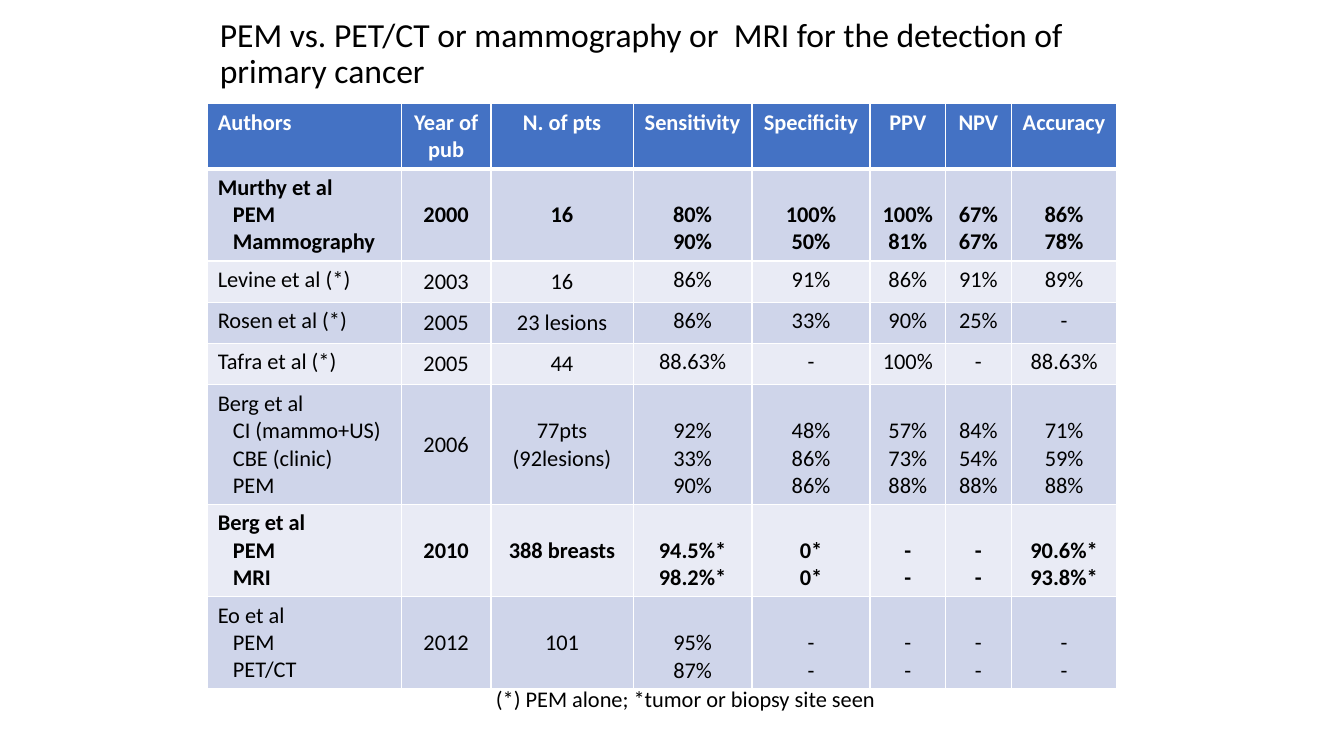
from dataclasses import dataclass

from pptx import Presentation
from pptx import util as u
from pptx.dml.color import RGBColor
from pptx.enum import text
from pptx.oxml import parse_xml
from pptx.oxml.ns import nsdecls


@dataclass(frozen=True)
class Theme:
    font: str = "Calibri"
    title_size: int = 24
    body_size: int = 16
    ink: str = "000000"
    white: str = "FFFFFF"
    header: str = "4472C4"
    bands: tuple = ("CFD5EA", "E9EBF5")
    thin: int = 1
    thick: int = 3


THEME = Theme()
COLUMN_WIDTHS = [1.92, 0.89, 1.41, 1.18, 1.17, 0.75, 0.65, 1.05]
HEADERS = ["Authors", "Year of\npub", "N. of pts", "Sensitivity",
           "Specificity", "PPV", "NPV", "Accuracy"]
# One study per row; a line break separates the methods compared
STUDIES = [
    ["Murthy et al\nPEM\nMammography", "2000", "16", "80%\n90%",
     "100%\n50%", "100%\n81%", "67%\n67%", "86%\n78%"],
    ["Levine et al (*)", "2003", "16", "86%", "91%", "86%", "91%", "89%"],
    ["Rosen et al (*)", "2005", "23 lesions", "86%", "33%", "90%", "25%", "-"],
    ["Tafra et al (*)", "2005", "44", "88.63%", "-", "100%", "-", "88.63%"],
    ["Berg et al\nCI (mammo+US)\nCBE (clinic)\nPEM", "2006",
     "77pts\n(92lesions)", "92%\n33%\n90%", "48%\n86%\n86%",
     "57%\n73%\n88%", "84%\n54%\n88%", "71%\n59%\n88%"],
    ["Berg et al\nPEM\nMRI", "2010", "388 breasts", "94.5%*\n98.2%*",
     "0*\n0*", "-\n-", "-\n-", "90.6%*\n93.8%*"],
    ["Eo et al\nPEM\nPET/CT", "2012", "101", "95%\n87%",
     "-\n-", "-\n-", "-\n-", "-\n-"],
]
BOLD_STUDIES = {1, 6}


def add_run(paragraph, words, size, color, bold=False):
    run = paragraph.add_run()
    run.text = words
    run.font.name = THEME.font
    run.font.size = u.Pt(size)
    run.font.bold = bold
    run.font.color.rgb = RGBColor.from_string(color)


def add_border(cell, side, width):
    cell._tc.get_or_add_tcPr().append(parse_xml(
        f'<a:ln{side} {nsdecls("a")} w="{u.Pt(width)}"><a:solidFill>'
        f'<a:srgbClr val="{THEME.white}"/></a:solidFill></a:ln{side}>'))


def place_title(slide, left, top, width, height):
    title = slide.shapes.title
    title.left, title.top = u.Inches(left), u.Inches(top)
    title.width, title.height = u.Inches(width), u.Inches(height)
    frame = title.text_frame
    frame.word_wrap = True
    frame.auto_size = text.MSO_AUTO_SIZE.NONE
    frame.vertical_anchor = text.MSO_ANCHOR.MIDDLE
    paragraph = frame.paragraphs[0]
    paragraph.alignment = text.PP_ALIGN.LEFT
    paragraph.line_spacing = 0.9
    add_run(paragraph, "PEM vs. PET/CT or mammography or  MRI for the "
            "detection of primary cancer", THEME.title_size, THEME.ink)


def fill_cell(cell, words, row, column, row_lines):
    is_header = row == 0
    # Borders come before the fill in the cell properties
    for side in "LRTB":
        heavy = (row, side) in {(0, "B"), (1, "T")}
        add_border(cell, side, THEME.thick if heavy else THEME.thin)
    cell.fill.solid()
    cell.fill.fore_color.rgb = RGBColor.from_string(
        THEME.header if is_header else THEME.bands[(row - 1) % 2])

    # Results of multi-line studies line up with the method names
    if not is_header and column in (1, 2):
        cell.vertical_anchor = text.MSO_ANCHOR.MIDDLE
    elif not is_header and column > 2 and row_lines > 1:
        cell.vertical_anchor = text.MSO_ANCHOR.BOTTOM
    else:
        cell.vertical_anchor = text.MSO_ANCHOR.TOP

    frame = cell.text_frame
    for index, line in enumerate(words.split("\n")):
        paragraph = frame.add_paragraph() if index else frame.paragraphs[0]
        if column:
            paragraph.alignment = text.PP_ALIGN.CENTER
        elif index:
            paragraph._p.get_or_add_pPr().set("marL", str(u.Inches(0.15)))
        add_run(paragraph, line, THEME.body_size,
                THEME.white if is_header else THEME.ink,
                is_header or row in BOLD_STUDIES)


def place_table(slide, left, top, width):
    rows = [HEADERS] + STUDIES
    line_counts = [max(words.count("\n") + 1 for words in row) for row in rows]
    heights = [max(0.41, 0.1 + 0.27 * count) for count in line_counts]
    table = slide.shapes.add_table(
        len(rows), len(HEADERS), u.Inches(left), u.Inches(top),
        u.Inches(width), u.Inches(sum(heights))).table
    for column, column_width in zip(table.columns, COLUMN_WIDTHS):
        column.width = u.Inches(column_width)
    for r, (row, height, count) in enumerate(zip(rows, heights, line_counts)):
        table.rows[r].height = u.Inches(height)
        for c, words in enumerate(row):
            fill_cell(table.cell(r, c), words, r, c, count)


def place_footnote(slide, left, top, width, height):
    box = slide.shapes.add_textbox(u.Inches(left), u.Inches(top),
                                   u.Inches(width), u.Inches(height))
    frame = box.text_frame
    frame.word_wrap = False
    frame.auto_size = text.MSO_AUTO_SIZE.SHAPE_TO_FIT_TEXT
    add_run(frame.paragraphs[0], "(*) PEM alone; *tumor or biopsy site seen",
            THEME.body_size, THEME.ink)


def main():
    presentation = Presentation()
    presentation.slide_width = u.Inches(13.33)
    presentation.slide_height = u.Inches(7.5)
    slide = presentation.slides.add_slide(presentation.slide_layouts[5])
    place_title(slide, 2.08, 0.25, 9, 0.58)
    place_table(slide, 2.06, 1.03, sum(COLUMN_WIDTHS))
    place_footnote(slide, 4.82, 6.75, 4.01, 0.37)
    presentation.save("out.pptx")


if __name__ == "__main__":
    main()
